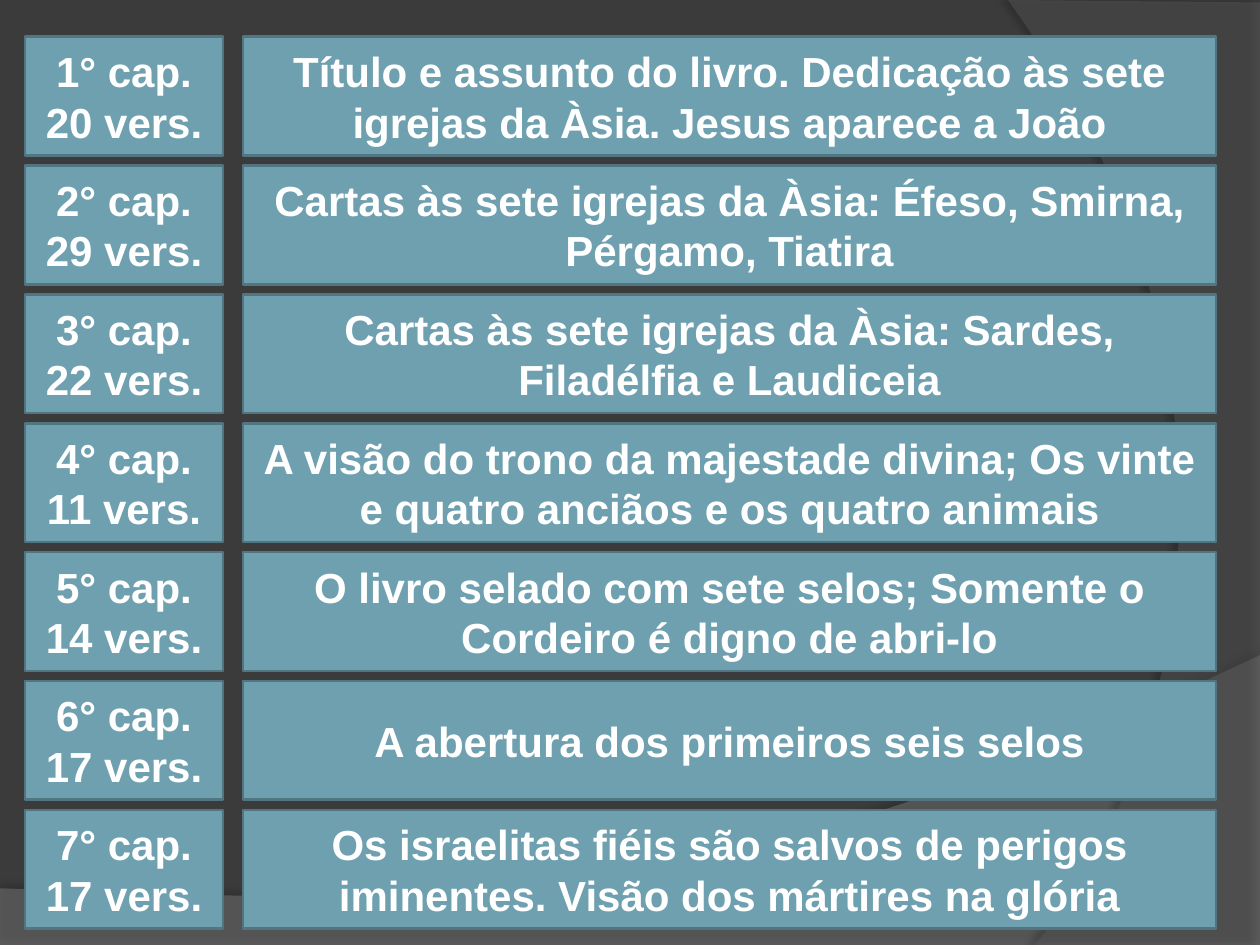
import lxml.etree
import pptx
import pptx.dml.color
import pptx.enum.shapes
import pptx.enum.text
import pptx.oxml.ns
import pptx.util
from pptx.util import Inches

COLORS = {
    "background": "3B3B3B",
    "floor": "7F7F7F",
    "side": "5E5E5E",
    "card": "6EA0B0",
    "border": "517682",
    "text": "FFFFFF",
    "shadow": "000000",
}

CHAPTERS = [
    (20, ["Título e assunto do livro. Dedicação às sete igrejas da Àsia. Jesus aparece a João"]),
    (29, ["Cartas às sete igrejas da Àsia: Éfeso, Smirna, Pérgamo, Tiatira"]),
    (22, ["Cartas às sete igrejas da Àsia: Sardes,", "Filadélfia e Laudiceia"]),
    (11, ["A visão do trono da majestade divina; Os vinte e quatro anciãos e os quatro animais"]),
    (14, ["O livro selado com sete selos; Somente o Cordeiro é digno de abri-lo"]),
    (17, ["A abertura dos primeiros seis selos"]),
    (17, ["Os israelitas fiéis são salvos de perigos iminentes. Visão dos mártires na glória"]),
]


def color(name):
    return pptx.dml.color.RGBColor.from_string(COLORS[name])


def curve(start, first, second, end, steps=40):
    points = []
    for step in range(1, steps + 1):
        t = step / steps
        weights = ((1 - t) ** 3, 3 * t * (1 - t) ** 2, 3 * t * t * (1 - t), t ** 3)
        corners = (start, first, second, end)
        points.append(tuple(sum(w * c[axis] for w, c in zip(weights, corners)) for axis in (0, 1)))
    return points


def add_element(parent, tag, **attributes):
    return lxml.etree.SubElement(parent, pptx.oxml.ns.qn(tag), attributes)


def add_wave(page, left, top, points, fill, opacity, shadow_opacity, distance, direction):
    places = [(Inches(left + x), Inches(top + y)) for x, y in points]
    builder = page.shapes.build_freeform(*places[0], scale=1.0)
    builder.add_line_segments(places[1:], close=True)
    wave = builder.convert_to_shape()
    wave.fill.solid()
    wave.fill.fore_color.rgb = color(fill)
    wave.line.fill.background()
    wave.shadow.inherit = False
    properties = wave._element.spPr
    tone = properties.find(".//" + pptx.oxml.ns.qn("a:srgbClr"))
    add_element(tone, "a:alpha", val=str(opacity * 1000))
    effects = properties.find(pptx.oxml.ns.qn("a:effectLst"))
    shadow = add_element(
        effects, "a:outerShdw", blurRad=str(pptx.util.Pt(4)), dist=str(pptx.util.Pt(distance)),
        dir=str(direction * 60000), algn="ctr", rotWithShape="0")
    tone = add_element(shadow, "a:srgbClr", val=COLORS["shadow"])
    add_element(tone, "a:alpha", val=str(shadow_opacity * 1000))


def add_backdrop(page, left, top, width, height):
    page.background.fill.solid()
    page.background.fill.fore_color.rgb = color("background")
    floor = [(0, 7.05), (0, height), (width, height), (width, 5.2)]
    floor += curve((width, 5.2), (5.59, 7.29), (3.91, 7.19), (0, 7.05))
    add_wave(page, left, top, floor, "floor", 45, 35, 3.5, 270)
    side = [(width, 0.02), (width, height), (8.21, height)]
    side += curve((8.21, height), (9.35, 6.19), (10.18, 3), (8, 0))
    add_wave(page, left, top, side, "side", 40, 45, 4, 180)


def add_card(page, left, top, width, height, lines):
    card = page.shapes.add_shape(
        pptx.enum.shapes.MSO_SHAPE.RECTANGLE,
        Inches(left), Inches(top), Inches(width), Inches(height))
    card.shadow.inherit = False
    card.fill.solid()
    card.fill.fore_color.rgb = color("card")
    card.line.color.rgb = color("border")
    card.line.width = pptx.util.Pt(1.5)
    frame = card.text_frame
    frame.word_wrap = True
    frame.vertical_anchor = pptx.enum.text.MSO_ANCHOR.MIDDLE
    for index, line in enumerate(lines):
        para = frame.paragraphs[0] if index == 0 else frame.add_paragraph()
        para.text = line
        para.alignment = pptx.enum.text.PP_ALIGN.CENTER
        para.font.name = "Arial"
        para.font.size = pptx.util.Pt(24)
        para.font.bold = True
        para.font.color.rgb = color("text")


def add_chapters(page, left, top, width, height):
    label_width, column_gap, row_gap = 1.57, 0.16, 0.08
    pitch = (height + row_gap) / len(CHAPTERS)
    card_height = pitch - row_gap
    summary_offset = label_width + column_gap
    for index, (verses, summary) in enumerate(CHAPTERS):
        row_top = top + index * pitch
        label = [f"{index + 1}° cap.", f"{verses} vers."]
        add_card(page, left, row_top, label_width, card_height, label)
        add_card(page, left + summary_offset, row_top, width - summary_offset, card_height, summary)


def main():
    deck = pptx.Presentation()
    deck.slide_width = Inches(10)
    deck.slide_height = Inches(7.5)
    page = deck.slides.add_slide(deck.slide_layouts[6])
    add_backdrop(page, 0, 0, 10, 7.5)
    add_chapters(page, 0.2, 0.29, 9.45, 7.08)
    deck.save("out.pptx")


if __name__ == "__main__":
    main()
